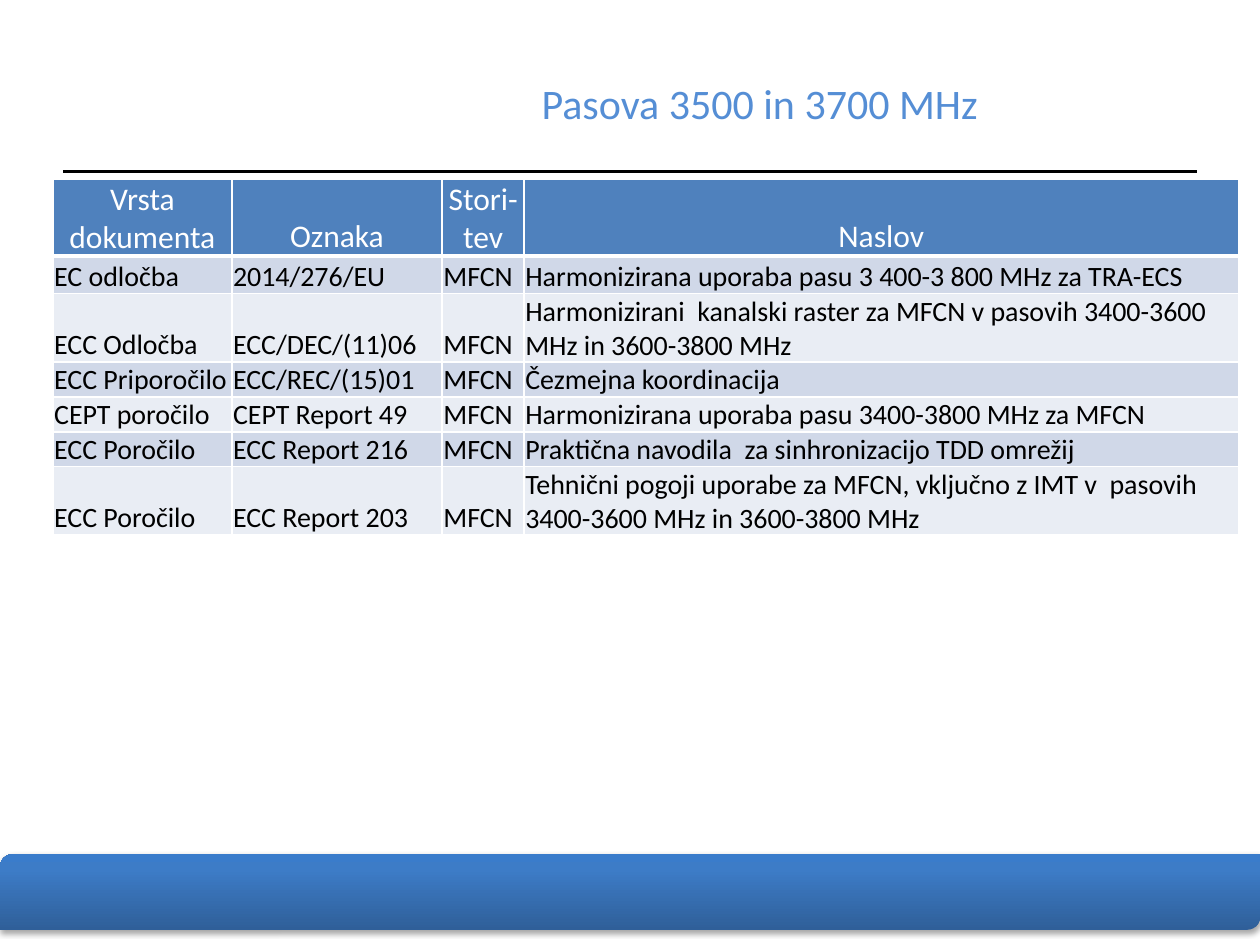
from typing import NamedTuple

from lxml.etree import SubElement
from pptx import Presentation
from pptx.dml.color import RGBColor
from pptx.enum.shapes import MSO_CONNECTOR, MSO_SHAPE
from pptx.enum.text import MSO_ANCHOR, PP_ALIGN
from pptx.oxml import parse_xml
from pptx.oxml.ns import nsdecls, qn
from pptx.util import Inches, Pt

FONT = "Calibri"
HEADER_FILL, BAND_FILLS = "4F81BD", ("D0D8E8", "E9EDF4")
BAR_STOPS = ((0, "2F5F99"), (80, "3D7CC7"), (100, "3A7CCB"))


class Document(NamedTuple):
    kind: str
    label: str
    service: str
    title: str


HEADER = Document("Vrsta dokumenta", "Oznaka", "Stori-tev", "Naslov")
DOCUMENTS = [
    Document("EC odločba", "2014/276/EU", "MFCN",
             "Harmonizirana uporaba pasu 3 400-3 800 MHz za TRA-ECS"),
    Document("ECC Odločba", "ECC/DEC/(11)06", "MFCN",
             "Harmonizirani  kanalski raster za MFCN v pasovih 3400-3600 MHz in 3600-3800 MHz"),
    Document("ECC Priporočilo", "ECC/REC/(15)01", "MFCN", "Čezmejna koordinacija"),
    Document("CEPT poročilo", "CEPT Report 49", "MFCN",
             "Harmonizirana uporaba pasu 3400-3800 MHz za MFCN"),
    Document("ECC Poročilo", "ECC Report 216", "MFCN",
             "Praktična navodila  za sinhronizacijo TDD omrežij"),
    Document("ECC Poročilo", "ECC Report 203", "MFCN",
             "Tehnični pogoji uporabe za MFCN, vključno z IMT v  pasovih "
             "3400-3600 MHz in 3600-3800 MHz"),
]
COL_WIDTHS = (1.42, 1.67, 0.65, 5.67)
ROW_HEIGHTS = (0.59, 0.3, 0.53, 0.27, 0.27, 0.27, 0.53)


def rgb(color: str) -> RGBColor:
    return RGBColor.from_string(color)


def write(tf, text: str, size: float, color: str, align: PP_ALIGN) -> None:
    tf.word_wrap = True
    p = tf.paragraphs[0]
    p.text = text
    p.alignment = align
    p.font.name, p.font.size = FONT, Pt(size)
    p.font.color.rgb = rgb(color)


def set_borders(cell, top: float, bottom: float) -> None:
    """White cell edges, widths in points."""
    tc_pr = cell._tc.get_or_add_tcPr()
    widths = (("L", 1), ("R", 1), ("T", top), ("B", bottom))
    for i, (side, width) in enumerate(widths):
        tc_pr.insert(i, parse_xml(
            f'<a:ln{side} {nsdecls("a")} w="{Pt(width)}"><a:solidFill>'
            f'<a:srgbClr val="FFFFFF"/></a:solidFill></a:ln{side}>'))


def add_bar(slide) -> None:
    """Footer bar with a vertical gradient and a soft shadow."""
    sp = slide.shapes.add_shape(MSO_SHAPE.ROUND_2_DIAG_RECTANGLE,
                                Inches(0), Inches(6.78), Inches(10), Inches(0.6))
    sp.line.fill.background()
    sp.fill.gradient()
    sp.fill.gradient_angle = 90
    sp_pr = sp._element.spPr
    stops = sp_pr.find(".//" + qn("a:gsLst"))
    for gs in list(stops):
        stops.remove(gs)
    for pos, color in BAR_STOPS:
        gs = SubElement(stops, qn("a:gs"), pos=str(pos * 1000))
        SubElement(gs, qn("a:srgbClr"), val=color)
    sp_pr.append(parse_xml(
        f'<a:effectLst {nsdecls("a")}><a:outerShdw blurRad="{Pt(3.1)}" dist="{Pt(1.8)}" '
        'dir="5400000" rotWithShape="0"><a:srgbClr val="000000"><a:alpha val="35000"/>'
        '</a:srgbClr></a:outerShdw></a:effectLst>'))


def add_rule(slide) -> None:
    line = slide.shapes.add_connector(MSO_CONNECTOR.STRAIGHT, Inches(0.5), Inches(1.36),
                                      Inches(9.5), Inches(1.36))
    line.line.color.rgb = rgb("000000")
    line.line.width = Pt(0)
    SubElement(line._element.spPr, qn("a:effectLst"))


def add_title(slide, text: str) -> None:
    tf = slide.shapes.add_textbox(Inches(2.56), Inches(0.39),
                                  Inches(6.94), Inches(0.85)).text_frame
    tf.vertical_anchor = MSO_ANCHOR.MIDDLE
    write(tf, text, 24, "558ED5", PP_ALIGN.CENTER)


def add_documents(slide) -> None:
    rows = [HEADER, *DOCUMENTS]
    table = slide.shapes.add_table(len(rows), len(COL_WIDTHS), Inches(0.42), Inches(1.42),
                                   Inches(9.4), Inches(2.83)).table
    for col, width in zip(table.columns, COL_WIDTHS):
        col.width = Inches(width)
    for i, (row, height, doc) in enumerate(zip(table.rows, ROW_HEIGHTS, rows)):
        row.height = Inches(height)
        header = i == 0
        for cell, text in zip(row.cells, doc):
            cell.margin_left = cell.margin_right = cell.margin_top = Inches(0.01)
            cell.margin_bottom = 0
            cell.vertical_anchor = MSO_ANCHOR.BOTTOM
            cell.fill.solid()
            cell.fill.fore_color.rgb = rgb(HEADER_FILL if header else BAND_FILLS[(i - 1) % 2])
            set_borders(cell, top=3 if i == 1 else 1, bottom=3 if header else 1)
            if header:
                write(cell.text_frame, text, 18, "FFFFFF", PP_ALIGN.CENTER)
            else:
                write(cell.text_frame, text, 16, "000000", PP_ALIGN.LEFT)
    # The synchronisation guide is set apart in its alignment
    guide = table.cell(5, 3)
    guide.vertical_anchor = MSO_ANCHOR.MIDDLE
    guide.text_frame.paragraphs[0].alignment = PP_ALIGN.JUSTIFY


def main() -> None:
    prs = Presentation()
    prs.slide_width, prs.slide_height = Inches(10), Inches(7.5)
    s = prs.slides.add_slide(prs.slide_layouts[6])
    add_bar(s)
    add_rule(s)
    add_title(s, "Pasova 3500 in 3700 MHz")
    add_documents(s)
    prs.save("out.pptx")


if __name__ == "__main__":
    main()
